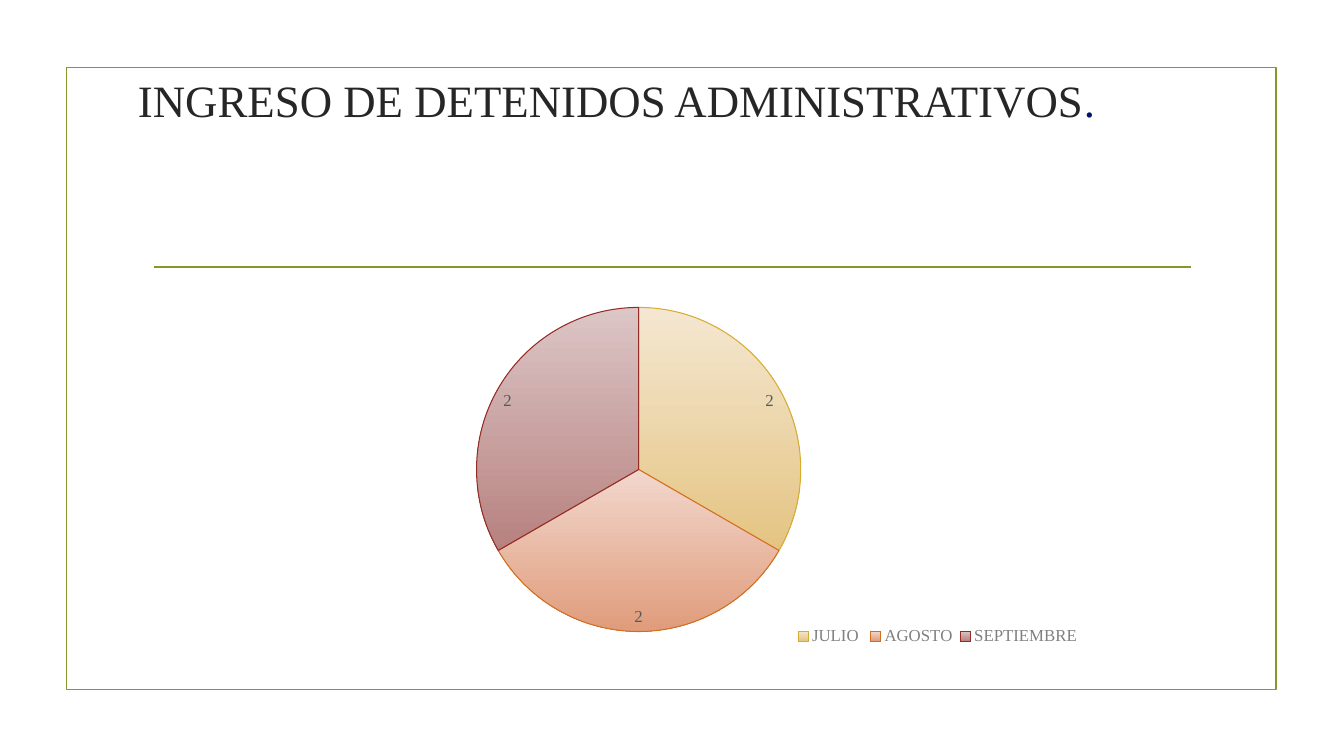
from typing import NamedTuple

from lxml.etree import SubElement
from pptx import Presentation
from pptx.chart.data import CategoryChartData
from pptx.dml.color import RGBColor
from pptx.enum.chart import XL_CHART_TYPE as ChartType
from pptx.enum.chart import XL_LABEL_POSITION as LabelPos
from pptx.enum.chart import XL_LEGEND_POSITION as LegendPos
from pptx.enum.shapes import MSO_CONNECTOR as Connector
from pptx.enum.shapes import MSO_SHAPE as Shape
from pptx.enum.text import MSO_ANCHOR as Anchor
from pptx.enum.text import PP_ALIGN as Align
from pptx.oxml.ns import qn
from pptx.util import Inches, Pt

FONT = "Times New Roman"
GREEN = RGBColor(0x83, 0x99, 0x2A)
DARK = RGBColor(0x26, 0x26, 0x26)
NAVY = RGBColor(0x03, 0x13, 0x6A)
GRAY = RGBColor(0x80, 0x80, 0x80)
LABEL_GRAY = RGBColor(0x59, 0x59, 0x59)


class Slice(NamedTuple):
    month: str
    value: int
    label: str
    top: RGBColor
    bottom: RGBColor
    line: RGBColor


SLICES = [
    Slice("JULIO ", 33, "2", RGBColor(0xF4, 0xE7, 0xD1),
          RGBColor(0xE4, 0xC4, 0x82), RGBColor(0xD8, 0xAC, 0x30)),
    Slice("AGOSTO", 33, "2", RGBColor(0xF2, 0xD7, 0xCD),
          RGBColor(0xE0, 0x9C, 0x7C), RGBColor(0xD2, 0x6E, 0x1E)),
    Slice("SEPTIEMBRE", 33, "2", RGBColor(0xDC, 0xC6, 0xC6),
          RGBColor(0xB7, 0x81, 0x7F), RGBColor(0x95, 0x2B, 0x25)),
]


def set_font(font, *, size: float, color: RGBColor) -> None:
    font.name = FONT
    font.size = Pt(size)
    font.color.rgb = color


def add_text(p, text: str, *, size: float, color: RGBColor) -> None:
    r = p.add_run()
    r.text = text
    set_font(r.font, size=size, color=color)


def set_layout(parent, index: int, *, inner: bool = False, **box: float) -> None:
    """Place a chart part by fractions of the chart's size."""
    for old in parent.findall(qn("c:layout")):
        parent.remove(old)
    layout = SubElement(parent, qn("c:layout"))
    parent.insert(index, layout)
    manual = SubElement(layout, qn("c:manualLayout"))
    if inner:
        SubElement(manual, qn("c:layoutTarget")).set("val", "inner")
    for axis in ("x", "y"):
        SubElement(manual, qn(f"c:{axis}Mode")).set("val", "edge")
    for name in ("x", "y", "w", "h"):
        SubElement(manual, qn(f"c:{name}")).set("val", str(box[name]))


def add_frame(slide) -> None:
    sp = slide.shapes.add_shape(Shape.RECTANGLE, Inches(0.66), Inches(0.67),
                                Inches(12), Inches(6.17))
    sp.shadow.inherit = False
    sp.fill.background()
    rule = slide.shapes.add_connector(Connector.STRAIGHT, Inches(1.53), Inches(2.65),
                                      Inches(11.81), Inches(2.65))
    SubElement(rule._element.spPr, qn("a:effectLst"))
    for line in (sp.line, rule.line):
        line.color.rgb = GREEN
        line.width = Pt(1.25)
    # The effect list must follow the line properties
    rule._element.spPr.append(rule._element.spPr.find(qn("a:effectLst")))


def add_title(slide) -> None:
    box = slide.shapes.add_textbox(Inches(0.43), Inches(0.36), Inches(11.37), Inches(1.26))
    tf = box.text_frame
    tf.word_wrap = True
    tf.vertical_anchor = Anchor.MIDDLE
    p = tf.paragraphs[0]
    p.alignment = Align.CENTER
    add_text(p, "INGRESO DE DETENIDOS ADMINISTRATIVOS", size=32, color=DARK)
    add_text(p, ".", size=32, color=NAVY)


def add_pie(slide) -> None:
    data = CategoryChartData()
    data.categories = [s.month for s in SLICES]
    data.add_series("Series 1", [s.value for s in SLICES])
    chart = slide.shapes.add_chart(ChartType.PIE, Inches(1.41), Inches(2.22),
                                   Inches(10.05), Inches(4.24), data).chart
    chart.has_title = False
    set_font(chart.font, size=12, color=LABEL_GRAY)
    plot = chart.plots[0]
    plot.vary_by_categories = True

    # Slices and their labels
    series = plot.series[0]
    labels = series.data_labels
    labels.show_percentage = True
    labels.show_value = False
    labels.position = LabelPos.INSIDE_END
    set_font(labels.font, size=12, color=LABEL_GRAY)
    for i, s in enumerate(SLICES):
        point = series.points[i]
        fill = point.format.fill
        fill.gradient()
        fill.gradient_angle = 270
        for stop, color in zip(fill.gradient_stops, (s.top, s.bottom)):
            stop.color.rgb = color
        point.format.line.color.rgb = s.line
        point.format.line.width = Pt(0.75)
        label = point.data_label
        add_text(label.text_frame.paragraphs[0], s.label, size=12, color=LABEL_GRAY)
        label.position = LabelPos.INSIDE_END

    # Legend and plot positions
    chart.has_legend = True
    legend = chart.legend
    legend.position = LegendPos.BOTTOM
    legend.include_in_layout = False
    set_font(legend.font, size=12, color=GRAY)
    set_layout(legend._element, 1, x=0.64, y=0.93, w=0.29, h=0.07)
    plot_area = chart._chartSpace.chart.plotArea
    set_layout(plot_area, 0, inner=True, x=0.33, y=0.15, w=0.32, h=0.85)


def main() -> None:
    prs = Presentation()
    prs.slide_width = Inches(13.33)
    prs.slide_height = Inches(7.5)
    slide = prs.slides.add_slide(prs.slide_layouts[6])
    add_frame(slide)
    add_title(slide)
    add_pie(slide)
    prs.save("out.pptx")


if __name__ == "__main__":
    main()
